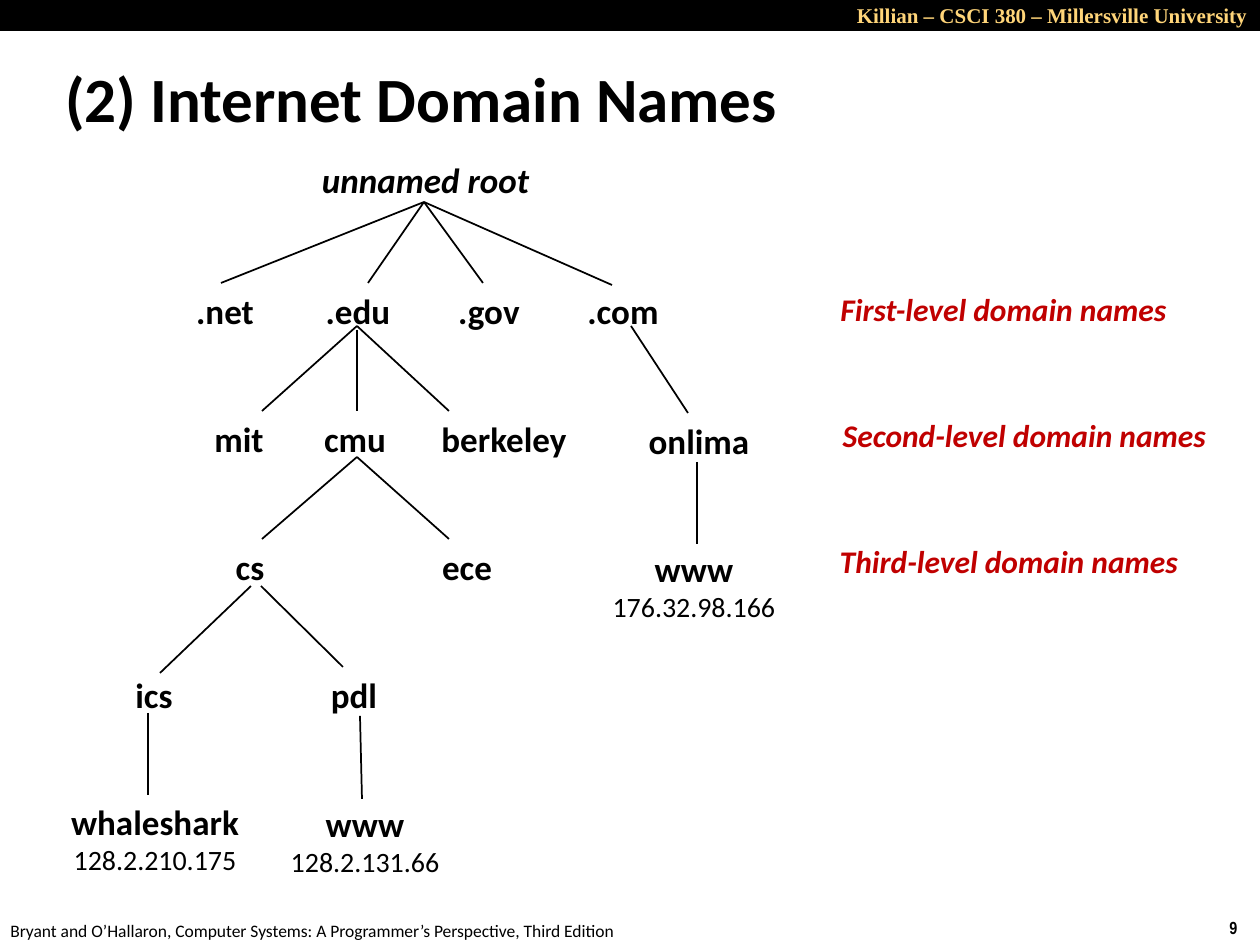
from dataclasses import dataclass

from lxml import etree
from pptx import Presentation
from pptx.dml.color import RGBColor
from pptx.enum.shapes import MSO_CONNECTOR, MSO_SHAPE
from pptx.enum.text import MSO_ANCHOR, MSO_AUTO_SIZE, PP_ALIGN
from pptx.oxml.ns import qn
from pptx.util import Emu, Pt

LEFT, CENTER, RIGHT = PP_ALIGN.LEFT, PP_ALIGN.CENTER, PP_ALIGN.RIGHT
TOP, MIDDLE = MSO_ANCHOR.TOP, MSO_ANCHOR.MIDDLE
FIT, NO_FIT = MSO_AUTO_SIZE.SHAPE_TO_FIT_TEXT, MSO_AUTO_SIZE.NONE
STRAIGHT, RECTANGLE = MSO_CONNECTOR.STRAIGHT, MSO_SHAPE.RECTANGLE

EMU_PER_PX = 914400 / 126
SLIDE_W, SLIDE_H = 1260, 945
NODE_H, HOST_H, LEVEL_H = 55, 89, 50


@dataclass(frozen=True)
class Style:
    size: int
    color: str = "000000"
    font: str = "Calibri"
    bold: bool = True
    italic: bool = False


class Theme:
    ink = "000000"
    edge_width = 1
    course = Style(12, "FFD579", "Times New Roman")
    page = Style(10, font="Arial Narrow")
    credit = Style(10, bold=False)
    title = Style(36)
    root = Style(20, italic=True)
    node = Style(20)
    address = Style(16, bold=False)
    level = Style(18, "C00000", italic=True)


# Tree labels: text, centre x, top, width, address of a host
NODES = [
    (".net", 225, 283, 86, None),
    (".edu", 358, 283, 94, None),
    (".gov", 489, 283, 90, None),
    (".com", 623, 283, 100, None),
    ("mit", 239, 411, 80, None),
    ("cmu", 355, 411, 92, None),
    ("berkeley", 504, 411, 154, None),
    ("onlima", 699, 413, 142, None),
    ("cs", 250, 539, 58, None),
    ("ece", 467, 539, 80, None),
    ("www", 694, 541, 192, "176.32.98.166"),
    ("ics", 154, 667, 94, None),
    ("pdl", 354, 667, 76, None),
    ("whaleshark", 155, 794, 198, "128.2.210.175"),
    ("www", 365, 796, 180, "128.2.131.66"),
]

# Each parent point with the child points it reaches
BRANCHES = [
    ((424, 202), [(221, 283), (368, 283), (483, 283), (612, 285)]),  # root
    ((357, 326), [(262, 411), (449, 411)]),  # .edu
    ((357, 330), [(357, 411)]),  # .edu to cmu
    ((631, 326), [(688, 413)]),  # .com
    ((357, 457), [(262, 539), (449, 539)]),  # cmu
    ((697, 462), [(697, 544)]),  # second level of .com
    ((251, 586), [(160, 673)]),  # cs to ics
    ((261, 586), [(343, 667)]),  # cs to pdl
    ((148, 713), [(148, 795)]),  # ics
    ((360, 716), [(362, 799)]),  # pdl
]

# Level captions: text, left, width
LEVELS = [
    ("First-level domain names", 825, 357),
    ("Second-level domain names", 828, 393),
    ("Third-level domain names", 825, 368),
]
LEVEL_TOP, LEVEL_STEP = 284, 126


def px(length):
    return Emu(round(length * EMU_PER_PX))


def add_text(slide, box, lines, align=LEFT, anchor=TOP, wrap=False, fit=FIT):
    """Add a text box; lines holds one (text, style) pair per paragraph."""
    frame = slide.shapes.add_textbox(*map(px, box)).text_frame
    frame.word_wrap = wrap
    frame.auto_size = fit
    frame.vertical_anchor = anchor
    for index, (text, style) in enumerate(lines):
        paragraph = frame.add_paragraph() if index else frame.paragraphs[0]
        paragraph.alignment = align
        run = paragraph.add_run()
        run.text = text
        run.font.name = style.font
        run.font.size = Pt(style.size)
        run.font.bold = style.bold
        run.font.italic = style.italic
        run.font.color.rgb = RGBColor.from_string(style.color)


def add_edge(slide, start, end):
    edge = slide.shapes.add_connector(STRAIGHT, *map(px, start + end))
    edge.line.color.rgb = RGBColor.from_string(Theme.ink)
    edge.line.width = Pt(Theme.edge_width)
    etree.SubElement(edge._element.spPr, qn("a:effectLst"))


def add_node(slide, name, center, top, width, address):
    lines = [(name, Theme.node)]
    if address:
        lines.append((address, Theme.address))
    box = (center - width / 2, top, width, HOST_H if address else NODE_H)
    add_text(slide, box, lines, CENTER, MIDDLE)


def add_page_frame(slide):
    bar = slide.shapes.add_shape(RECTANGLE, 0, 0, px(SLIDE_W), px(31))
    bar.shadow.inherit = False
    bar.fill.solid()
    bar.fill.fore_color.rgb = RGBColor.from_string(Theme.ink)
    bar.line.fill.background()
    add_text(slide, (567, -4, 693, 38),
             [("Killian – CSCI 380 – Millersville University", Theme.course)],
             RIGHT, wrap=True)
    add_text(slide, (1217, 911, 43, 34), [("9", Theme.page)])
    add_text(slide, (-2, 914, 640, 34),
             [("Bryant and O’Hallaron, Computer Systems: "
               "A Programmer’s Perspective, Third Edition", Theme.credit)])


def main():
    deck = Presentation()
    deck.slide_width, deck.slide_height = px(SLIDE_W), px(SLIDE_H)
    slide = deck.slides.add_slide(deck.slide_layouts[6])

    # Header, footer and title
    add_page_frame(slide)
    add_text(slide, (53, 58, 975, 79),
             [("(2) Internet Domain Names", Theme.title)],
             anchor=MIDDLE, wrap=True, fit=NO_FIT)

    # Domain tree
    add_text(slide, (308, 152, 235, NODE_H),
             [("unnamed root", Theme.root)], CENTER, MIDDLE)
    for node in NODES:
        add_node(slide, *node)
    for parent, children in BRANCHES:
        for child in children:
            add_edge(slide, parent, child)

    # Level captions
    for row, (caption, left, width) in enumerate(LEVELS):
        add_text(slide, (left, LEVEL_TOP + row * LEVEL_STEP, width, LEVEL_H),
                 [(caption, Theme.level)], CENTER, MIDDLE)

    deck.save("out.pptx")


if __name__ == "__main__":
    main()
